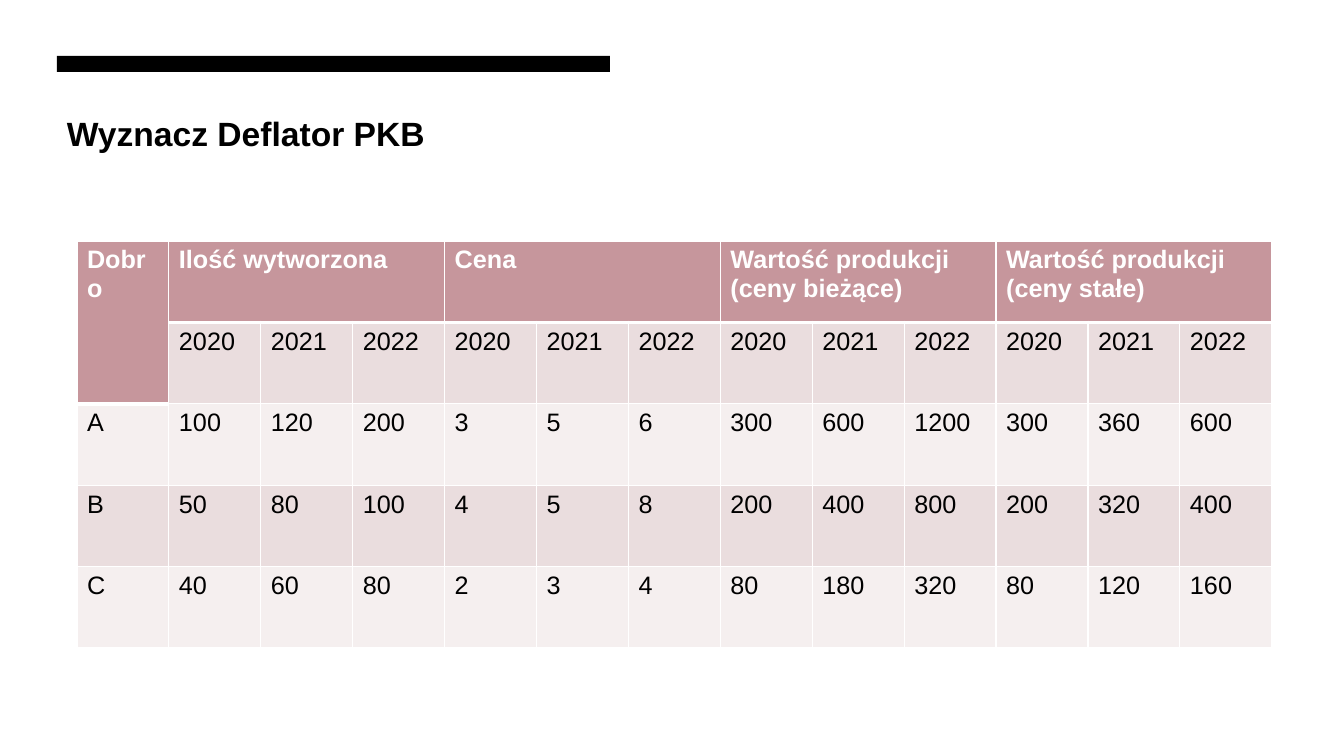
import pptx
import pptx.dml.color
import pptx.enum.shapes
import pptx.enum.text
import pptx.oxml
import pptx.oxml.ns
import pptx.util

PX = 914400 / 100.8
FONT = "Arial"
COLORS = {"black": "000000", "white": "FFFFFF", "header": "C6969C", "dark_band": "EADDDE", "light_band": "F5EFEF"}
YEARS = ["2020", "2021", "2022"]
GROUPS = ["Ilość wytworzona", "Cena", "Wartość produkcji (ceny bieżące)", "Wartość produkcji (ceny stałe)"]
GOODS = {
    "A": ([100, 120, 200], [3, 5, 6]),
    "B": ([50, 80, 100], [4, 5, 8]),
    "C": ([40, 60, 80], [2, 3, 4]),
}


def px(length):
    """Turn pixels into EMU."""
    return round(length * PX)


def rgb(name):
    """Look up a named colour."""
    return pptx.dml.color.RGBColor.from_string(COLORS[name])


def style_text(para, size, color, bold):
    """Set the font of a paragraph."""
    para.font.name = FONT
    para.font.size = pptx.util.Pt(size)
    para.font.bold = bold
    para.font.color.rgb = rgb(color)


def add_accent_bar(page, box):
    """Draw the solid bar above the title."""
    bar = page.shapes.add_shape(pptx.enum.shapes.MSO_SHAPE.RECTANGLE, *map(px, box))
    bar.shadow.inherit = False
    bar.fill.solid()
    bar.fill.fore_color.rgb = rgb("black")
    bar.line.fill.background()


def add_title(page, box, text):
    """Write the slide title at the top of its box."""
    frame = page.shapes.add_textbox(*map(px, box)).text_frame
    frame.word_wrap = True
    frame.vertical_anchor = pptx.enum.text.MSO_ANCHOR.TOP
    para = frame.paragraphs[0]
    para.text = text
    style_text(para, 24, "black", True)


def set_borders(cell, bottom_width):
    """Give a cell white borders, with its own bottom width."""
    properties = cell._tc.get_or_add_tcPr()
    widths = {"lnL": 1, "lnR": 1, "lnT": 1, "lnB": bottom_width}
    for index, (side, width) in enumerate(widths.items()):
        line = pptx.oxml.parse_xml(
            f'<a:{side} {pptx.oxml.ns.nsdecls("a")} w="{pptx.util.Pt(width)}">'
            f'<a:solidFill><a:srgbClr val="{COLORS["white"]}"/></a:solidFill></a:{side}>'
        )
        properties.insert(index, line)


def table_rows():
    """Build all rows, working out production values from quantities and prices."""
    header = ["Dobro"]
    for group in GROUPS:
        header += [group] + [""] * (len(YEARS) - 1)
    rows = [header, [""] + YEARS * len(GROUPS)]
    for good, (quantities, prices) in GOODS.items():
        current = [quantity * price for quantity, price in zip(quantities, prices)]
        constant = [quantity * prices[0] for quantity in quantities]
        rows.append([good, *quantities, *prices, *current, *constant])
    return rows


def add_production_table(page, box):
    """Place the table of goods, with equal rows and columns, in its box."""
    left, top, width, height = box
    rows = table_rows()
    table = page.shapes.add_table(len(rows), len(rows[0]), *map(px, box)).table
    for column in table.columns:
        column.width = px(width / len(rows[0]))
    for row in table.rows:
        row.height = px(height / len(rows))
    for row_index, values in enumerate(rows):
        band = "dark_band" if row_index % 2 else "light_band"
        for column_index, value in enumerate(values):
            is_header = row_index == 0 or (row_index == 1 and column_index == 0)
            cell = table.cell(row_index, column_index)
            cell.fill.solid()
            cell.fill.fore_color.rgb = rgb("header" if is_header else band)
            set_borders(cell, 3 if is_header else 1)
            para = cell.text_frame.paragraphs[0]
            para.text = str(value)
            style_text(para, 18, "white" if is_header else "black", is_header)
    table.cell(0, 0).merge(table.cell(1, 0))
    for start in range(1, len(rows[0]), len(YEARS)):
        table.cell(0, start).merge(table.cell(0, start + len(YEARS) - 1))


def main():
    """Build and save the deck."""
    deck = pptx.Presentation()
    deck.slide_width, deck.slide_height = px(1344), px(756)
    page = deck.slides.add_slide(deck.slide_layouts[6])
    add_accent_bar(page, (57, 56, 553, 16))
    add_title(page, (57, 108, 1141, 120), "Wyznacz Deflator PKB")
    add_production_table(page, (77, 241, 1195, 407))
    deck.save("out.pptx")


if __name__ == "__main__":
    main()
